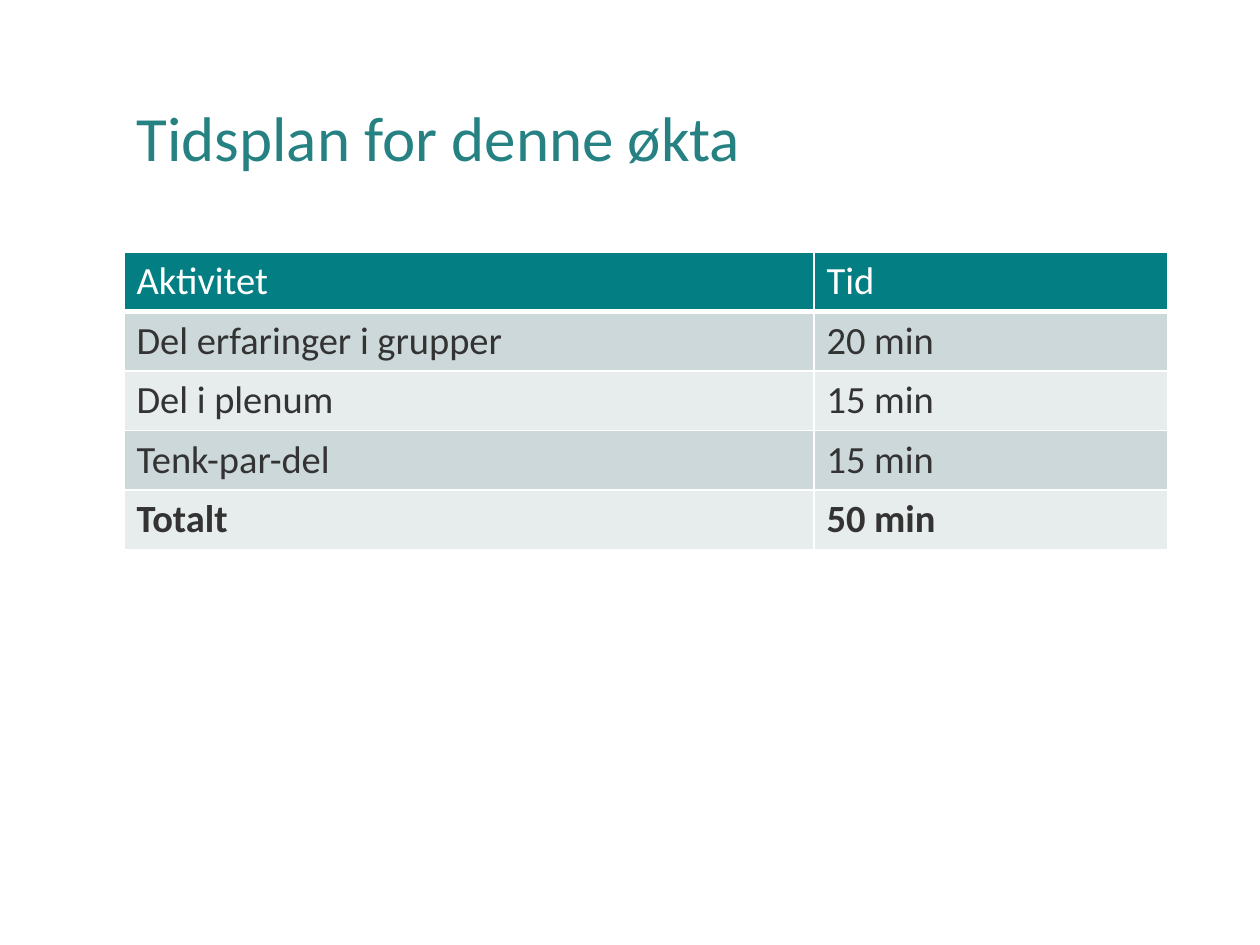
from lxml import etree
from pptx import Presentation
from pptx import util as u
from pptx.dml.color import RGBColor
from pptx.enum import text
from pptx.oxml.ns import qn

SCALE = 914400 / 126
FONT = "Calibri"
COLORS = {
    "title": "268183",
    "header": "037F83",
    "odd": "CCD8D9",
    "even": "E7ECED",
    "ink": "333333",
    "white": "FFFFFF",
}
SCHEDULE = [
    ("Aktivitet", "Tid"),
    ("Del erfaringer i grupper", "20 min"),
    ("Del i plenum", "15 min"),
    ("Tenk-par-del", "15 min"),
    ("Totalt", "50 min"),
]


def px(length):
    return u.Emu(round(length * SCALE))


def write(frame, words, size, color, bold=False, spacing=None):
    para = frame.paragraphs[0]
    para.alignment = text.PP_ALIGN.LEFT
    para.line_spacing = spacing
    span = para.add_run()
    span.text = words
    span.font.name = FONT
    span.font.size = u.Pt(size)
    span.font.bold = bold
    span.font.color.rgb = RGBColor.from_string(COLORS[color])


def set_borders(cell, color, bottom=1):
    """Draw 1 pt lines round a cell, with its own width for the bottom one."""
    properties = cell._tc.get_or_add_tcPr()
    widths = {"lnL": 1, "lnR": 1, "lnT": 1, "lnB": bottom}
    for index, (side, width) in enumerate(widths.items()):
        line = etree.Element(qn(f"a:{side}"), w=str(u.Pt(width)))
        fill = etree.SubElement(line, qn("a:solidFill"))
        etree.SubElement(fill, qn("a:srgbClr"), val=COLORS[color])
        properties.insert(index, line)


def place_title(page, words, left, top, width, height):
    title = page.shapes.title
    title.left, title.top = px(left), px(top)
    title.width, title.height = px(width), px(height)
    title.text_frame.vertical_anchor = text.MSO_ANCHOR.MIDDLE
    write(title.text_frame, words, 36, "title", spacing=0.9)


def place_schedule(page, rows, left, top, width, height, first_column, row_height):
    holder = page.shapes.add_table(
        len(rows), len(rows[0]), px(left), px(top), px(width), px(height)
    )
    table = holder.table
    table.first_row = table.horz_banding = False
    table.columns[0].width = px(first_column)
    table.columns[1].width = px(width - first_column)
    for number, values in enumerate(rows):
        table.rows[number].height = px(row_height)
        header, total = number == 0, number == len(rows) - 1
        shade = "header" if header else "odd" if number % 2 else "even"
        for column, words in enumerate(values):
            cell = table.cell(number, column)
            cell.fill.solid()
            cell.fill.fore_color.rgb = RGBColor.from_string(COLORS[shade])
            set_borders(cell, "white", bottom=3 if header else 1)
            write(cell.text_frame, words, 22, "white" if header else "ink", bold=total)
    holder.height = px(height)


def main():
    deck = Presentation()
    deck.slide_width, deck.slide_height = px(1260), px(945)
    page = deck.slides.add_slide(deck.slide_layouts.get_by_name("Title Only"))
    left, width = 124, 1044
    place_title(page, "Tidsplan for denne økta", left, 50, width, 183)
    place_schedule(page, SCHEDULE, left, 252, width, 294, first_column=690, row_height=52)
    deck.save("out.pptx")


if __name__ == "__main__":
    main()
